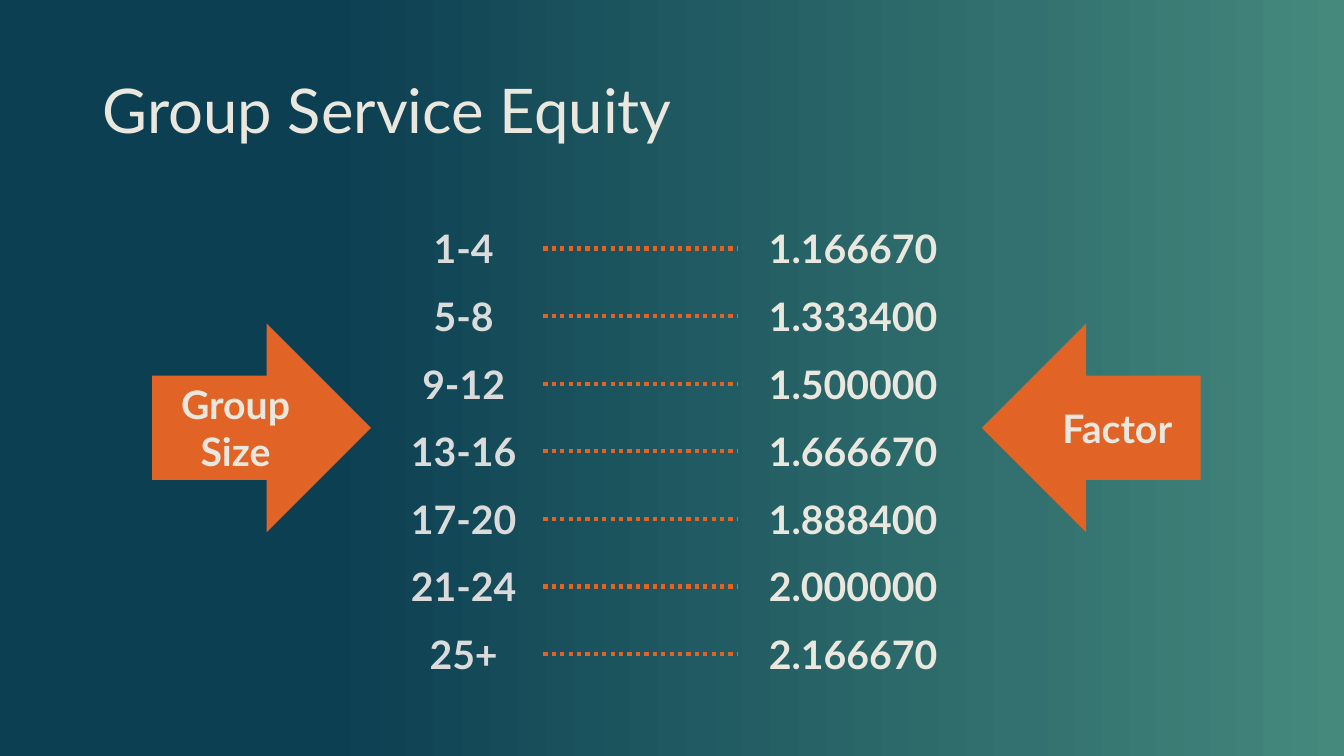
from copy import deepcopy

from pptx import Presentation, util as u
from pptx.dml.color import RGBColor
from pptx.enum import dml, shapes, text
from pptx.oxml import ns, xmlchemy as xml

COLORS = {
    "navy": "0C3F52",
    "teal": "32716F",
    "green": "45897D",
    "cream": "EAE7DF",
    "gray": "DBDBDB",
    "orange": "E16326",
}
FACTORS = {
    "1-4": "1.166670",
    "5-8": "1.333400",
    "9-12": "1.500000",
    "13-16": "1.666670",
    "17-20": "1.888400",
    "21-24": "2.000000",
    "25+": "2.166670",
}


class Deck:
    """Style and current slide; all lengths are percent of the slide's size."""

    font = "Lato"
    body_size = 28

    def __init__(self, presentation):
        self.width = presentation.slide_width
        self.height = presentation.slide_height
        self.slide = presentation.slides.add_slide(presentation.slide_layouts[6])

    def x(self, percent):
        return u.Emu(round(self.width * percent / 100))

    def y(self, percent):
        return u.Emu(round(self.height * percent / 100))

    def box(self, left, top, width, height):
        return self.x(left), self.y(top), self.x(width), self.y(height)

    def color(self, name):
        return RGBColor.from_string(COLORS[name])

    def background(self, stops):
        fill = self.slide.background.fill
        fill.gradient()
        fill.gradient_angle = 0
        stop_list = self.slide.element.find(".//" + ns.qn("a:gsLst"))
        while len(stop_list) < len(stops):
            stop_list.append(deepcopy(stop_list[-1]))
        for stop, (position, name) in zip(fill.gradient_stops, stops):
            stop.position = position
            stop.color.rgb = self.color(name)

    def set_text(self, shape, wording, color, align, anchor, size=body_size, bold=True):
        frame = shape.text_frame
        frame.text = wording
        frame.word_wrap = True
        frame.vertical_anchor = anchor
        paragraph = frame.paragraphs[0]
        paragraph.alignment = align
        font = paragraph.runs[0].font
        font.name, font.size, font.bold = self.font, u.Pt(size), bold
        font.color.rgb = self.color(color)
        return frame

    def title(self, wording, *place):
        shape = self.slide.shapes.add_textbox(*self.box(*place))
        frame = self.set_text(shape, wording, "cream", text.PP_ALIGN.LEFT,
                              text.MSO_ANCHOR.MIDDLE, size=44, bold=False)
        frame.paragraphs[0].line_spacing = 0.9

    def label(self, wording, color, align, *place):
        shape = self.slide.shapes.add_textbox(*self.box(*place))
        frame = self.set_text(shape, wording, color, align, text.MSO_ANCHOR.TOP)
        frame.auto_size = text.MSO_AUTO_SIZE.SHAPE_TO_FIT_TEXT

    def arrow(self, kind, wording, anchor, *place):
        shape = self.slide.shapes.add_shape(kind, *self.box(*place))
        shape.shadow.inherit = False
        shape.fill.solid()
        shape.fill.fore_color.rgb = self.color("orange")
        shape.line.fill.background()
        self.set_text(shape, wording, "cream", text.PP_ALIGN.CENTER, anchor)

    def dotted_line(self, start, end, level):
        line = self.slide.shapes.add_connector(
            shapes.MSO_CONNECTOR.STRAIGHT,
            self.x(start), self.y(level), self.x(end), self.y(level))
        line.line.color.rgb = self.color("orange")
        line.line.width = u.Pt(3)
        line.line.dash_style = dml.MSO_LINE.ROUND_DOT
        properties = line.element.spPr
        properties.append(xml.OxmlElement("a:effectLst"))


def main():
    presentation = Presentation()
    presentation.slide_width = u.Inches(13.33)
    presentation.slide_height = u.Inches(7.5)
    deck = Deck(presentation)

    # Background and title
    deck.background([(0.24, "navy"), (0.76, "teal"), (1, "green")])
    deck.title("Group Service Equity", 6.9, 5.33, 86.25, 19.33)

    # Group sizes, dotted leaders and factors
    first_row, row_height, text_height = 29.07, 8.94, 7.6
    for row, (group, factor) in enumerate(FACTORS.items()):
        top = first_row + row * row_height
        deck.label(group, "gray", text.PP_ALIGN.CENTER, 29.7, top, 9.6, text_height)
        deck.label(factor, "cream", text.PP_ALIGN.LEFT, 56.48, top, 16.28, text_height)
        deck.dotted_line(40.43, 54.9, top + text_height / 2)

    # Column arrows
    arrow_top, arrow_width, arrow_height = 42.8, 16.28, 27.6
    deck.arrow(shapes.MSO_SHAPE.RIGHT_ARROW, "Group Size", text.MSO_ANCHOR.TOP,
               11.33, arrow_top, arrow_width, arrow_height)
    deck.arrow(shapes.MSO_SHAPE.LEFT_ARROW, "Factor", text.MSO_ANCHOR.MIDDLE,
               73.05, arrow_top, arrow_width, arrow_height)

    presentation.save("out.pptx")


if __name__ == "__main__":
    main()
